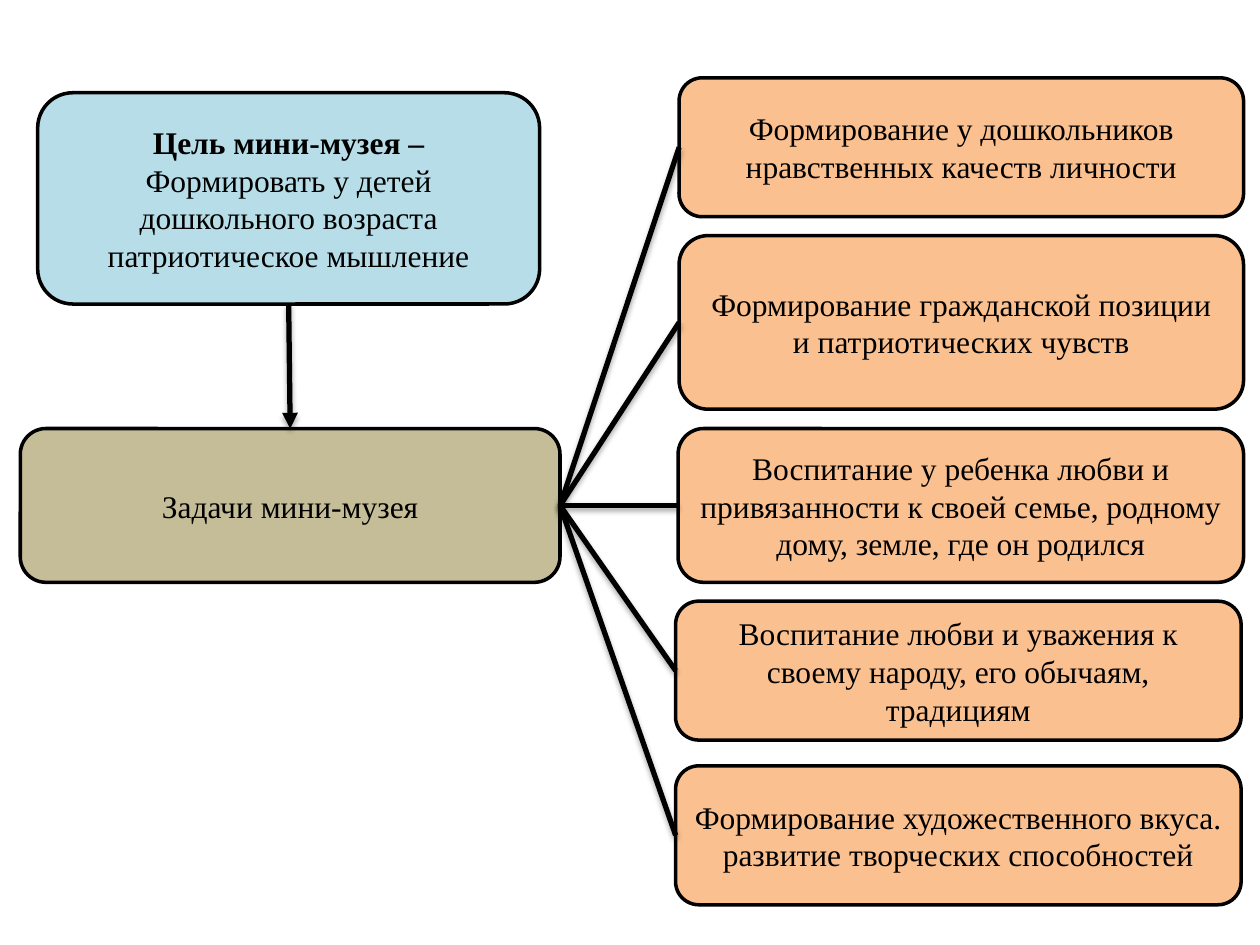
"""Draw the goal of the mini-museum and the tasks that follow from it."""
from dataclasses import dataclass

from lxml import etree
from pptx import Presentation, util as u
from pptx.dml.color import RGBColor
from pptx.enum import shapes as sh, text as tx
from pptx.oxml import ns

TOP, LEFT, BOTTOM, RIGHT = range(4)
BLACK, PEACH, BLUE, KHAKI = "000000", "FAC090", "B7DEE8", "C4BD97"
SHADE = (
    f'<a:effectLst {ns.nsdecls("a")}>'
    '<a:outerShdw blurRad="40000" dist="23000" dir="5400000" rotWithShape="0">'
    '<a:srgbClr val="000000"><a:alpha val="35000"/></a:srgbClr>'
    '</a:outerShdw></a:effectLst>'
)


@dataclass
class Box:
    left: float
    top: float
    width: float
    height: float
    fill: str
    text: str
    head: str = ""


GOAL = Box(0.76, 1.87, 10.12, 4.26, BLUE,
           "Формировать у детей дошкольного возраста патриотическое мышление",
           "Цель мини-музея – ")
HUB = Box(0.41, 8.64, 10.88, 3.1, KHAKI, "Задачи мини-музея")
TASKS = [
    Box(13.69, 1.57, 11.38, 2.8, PEACH,
        "Формирование у дошкольников нравственных качеств личности"),
    Box(13.69, 4.75, 11.38, 3.5, PEACH,
        "Формирование гражданской позиции и патриотических чувств"),
    Box(13.67, 8.64, 11.4, 3.1, PEACH,
        "Воспитание у ребенка любви и привязанности к своей семье, "
        "родному дому, земле, где он родился"),
    Box(13.62, 12.12, 11.4, 2.8, PEACH,
        "Воспитание любви и уважения к своему народу, его обычаям, традициям"),
    Box(13.62, 15.44, 11.4, 2.8, PEACH,
        "Формирование художественного вкуса. развитие творческих способностей"),
]


def paint(part, tone: str) -> None:
    """Give a fill a solid colour."""
    part.solid()
    part.fore_color.rgb = RGBColor.from_string(tone)


def write(para, words: str, bold: bool = False) -> None:
    """Add one run to a paragraph."""
    run = para.add_run()
    run.text = words
    run.font.name = "Times New Roman"
    run.font.size = u.Pt(18)
    run.font.bold = bold
    paint(run.font.fill, BLACK)


def draw(slide, box: Box):
    """Draw a rounded box with centred text."""
    size = map(u.Cm, (box.left, box.top, box.width, box.height))
    shape = slide.shapes.add_shape(sh.MSO_SHAPE.ROUNDED_RECTANGLE, *size)
    shape.shadow.inherit = False
    paint(shape.fill, box.fill)
    paint(shape.line.fill, BLACK)
    shape.line.width = u.Pt(2)
    frame = shape.text_frame
    frame.word_wrap = True
    frame.vertical_anchor = tx.MSO_ANCHOR.MIDDLE
    para = frame.paragraphs[0]
    para.alignment = tx.PP_ALIGN.CENTER
    if box.head:
        write(para, box.head, True)
    write(para, box.text)
    return shape


def join(slide, start, out: int, end, into: int, arrow: bool = False) -> None:
    """Link two boxes at the given sides."""
    line = slide.shapes.add_connector(sh.MSO_CONNECTOR.STRAIGHT, 0, 0, 0, 0)
    line.begin_connect(start, out)
    line.end_connect(end, into)
    paint(line.line.fill, BLACK)
    line.line.width = u.Pt(3)
    if arrow:
        etree.SubElement(line.line._get_or_add_ln(), ns.qn("a:tailEnd"), type="triangle")
    line._element.spPr.append(etree.fromstring(SHADE))


def main() -> None:
    """Build and save the slide."""
    deck = Presentation()
    deck.slide_width, deck.slide_height = u.Cm(25.4), u.Cm(19.05)
    slide = deck.slides.add_slide(deck.slide_layouts[6])
    goal, hub = draw(slide, GOAL), draw(slide, HUB)
    for task in TASKS:
        join(slide, hub, RIGHT, draw(slide, task), LEFT)
    join(slide, goal, BOTTOM, hub, TOP, arrow=True)
    deck.save("out.pptx")


if __name__ == "__main__":
    main()
